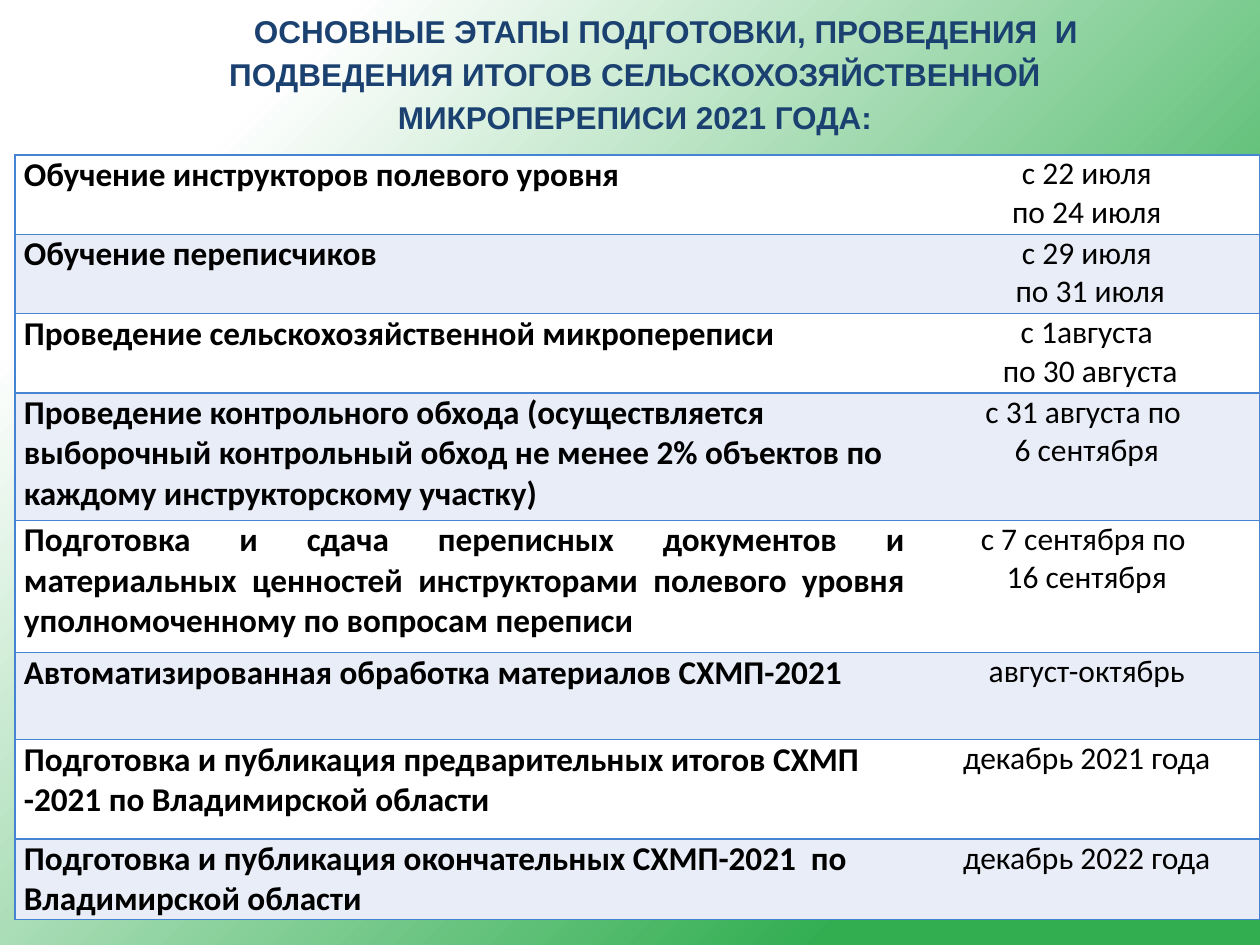
"""Build the slide with the stages of the 2021 agricultural micro-census."""
from lxml.etree import SubElement
from pptx import Presentation
from pptx.dml.color import RGBColor
from pptx.enum.text import MSO_ANCHOR, MSO_AUTO_SIZE, PP_ALIGN
from pptx.oxml.ns import qn
from pptx.util import Inches, Pt

TITLE = ("ОСНОВНЫЕ ЭТАПЫ ПОДГОТОВКИ, ПРОВЕДЕНИЯ  И ПОДВЕДЕНИЯ ИТОГОВ "
         "СЕЛЬСКОХОЗЯЙСТВЕННОЙ МИКРОПЕРЕПИСИ 2021 ГОДА:")
LEFT, CENTER, JUSTIFY = PP_ALIGN.LEFT, PP_ALIGN.CENTER, PP_ALIGN.JUSTIFY
STAGES = [
    (0.63, LEFT, "Обучение инструкторов полевого уровня",
     ["с 22 июля", "по 24 июля"]),
    (0.63, LEFT, "Обучение переписчиков", ["с 29 июля", " по 31 июля"]),
    (0.63, LEFT, "Проведение сельскохозяйственной микропереписи",
     ["с 1августа", " по 30 августа"]),
    (1.01, LEFT, "Проведение контрольного обхода (осуществляется выборочный "
     "контрольный обход не менее 2% объектов по каждому инструкторскому участку)",
     ["с 31 августа по ", "6 сентября"]),
    (1.05, JUSTIFY, "Подготовка и сдача переписных документов и материальных "
     "ценностей инструкторами полевого уровня уполномоченному по вопросам переписи",
     ["с 7 сентября по ", "16 сентября"]),
    (0.69, LEFT, "Автоматизированная обработка материалов СХМП-2021",
     ["август-октябрь"]),
    (0.79, LEFT, "Подготовка и публикация предварительных итогов СХМП -2021 "
     "по Владимирской области", ["декабрь 2021 года"]),
    (0.64, LEFT, "Подготовка и публикация окончательных СХМП-2021  "
     "по Владимирской области", ["декабрь 2022 года"]),
]
COLUMNS = [7.13, 2.75]
BANDS = ["FFFFFF", "E9EDF7"]
BORDER = "4584D3"
STAGE_FONT = {"name": "Calibri", "size": Pt(19), "bold": True}
DATE_FONT = {"name": "Calibri", "size": Pt(18), "bold": False}
TITLE_FONT = {"name": "Arial", "size": Pt(18), "bold": True}


def rgb(value):
    """Turn a hex string into a colour."""
    return RGBColor.from_string(value)


def assign(target, values):
    """Set each named attribute on the target."""
    for name, value in values.items():
        setattr(target, name, value)


def write(p, text, font, color, align):
    """Put one formatted run into a paragraph."""
    p.alignment = align
    r = p.add_run()
    r.text = text
    assign(r.font, font)
    r.font.color.rgb = rgb(color)


def set_borders(cell, open_side):
    """Draw 1 pt borders on every side but the open one."""
    tcPr = cell._tc.get_or_add_tcPr()
    for side in "LRTB":
        ln = SubElement(tcPr, qn(f"a:ln{side}"), w=str(Pt(1)))
        if side == open_side:
            SubElement(ln, qn("a:noFill"))
        else:
            fill = SubElement(ln, qn("a:solidFill"))
            SubElement(fill, qn("a:srgbClr"), val=BORDER)


def fill_cell(cell, lines, font, align, band, open_side):
    """Write the lines of a cell and set its look."""
    assign(cell, {"margin_left": Inches(0.07), "margin_right": Inches(0.07),
                  "margin_top": 0, "margin_bottom": 0,
                  "vertical_anchor": MSO_ANCHOR.TOP})
    set_borders(cell, open_side)
    cell.fill.solid()
    cell.fill.fore_color.rgb = rgb(band)
    tf = cell.text_frame
    for i, line in enumerate(lines):
        p = tf.add_paragraph() if i else tf.paragraphs[0]
        write(p, line, font, "000000", align)


def add_background(s):
    """Shade the slide from white to green along the diagonal."""
    fill = s.background.fill
    fill.gradient()
    fill.gradient_angle = 315
    for stop, (position, color) in zip(fill.gradient_stops,
                                       [(0.16, "FFFFFF"), (0.8, "32AE51")]):
        stop.position = position
        stop.color.rgb = rgb(color)


def add_title(s):
    """Place and format the title."""
    sp = s.shapes.title
    assign(sp, {"left": Inches(0.59), "top": 0,
                "width": Inches(8.9), "height": Inches(1.49)})
    tf = sp.text_frame
    assign(tf, {"word_wrap": True, "auto_size": MSO_AUTO_SIZE.NONE,
                "vertical_anchor": MSO_ANCHOR.TOP})
    p = tf.paragraphs[0]
    p.line_spacing = 1.14
    write(p, TITLE, TITLE_FONT, "1B4171", CENTER)
    p._p.get_or_add_pPr().set("indent", str(Inches(0.49)))


def add_stages(s):
    """Add the table of stages and dates."""
    height = sum(stage[0] for stage in STAGES)
    table = s.shapes.add_table(len(STAGES), len(COLUMNS), Inches(0.12), Inches(1.23),
                               Inches(sum(COLUMNS)), Inches(height)).table
    assign(table, {"first_row": False, "horz_banding": False})
    for column, width in zip(table.columns, COLUMNS):
        column.width = Inches(width)
    for i, (row_height, align, stage, dates) in enumerate(STAGES):
        table.rows[i].height = Inches(row_height)
        band = BANDS[i % 2]
        fill_cell(table.cell(i, 0), [stage], STAGE_FONT, align, band, "R")
        fill_cell(table.cell(i, 1), dates, DATE_FONT, CENTER, band, "L")


def main():
    """Build and save the presentation."""
    prs = Presentation()
    assign(prs, {"slide_width": Inches(10), "slide_height": Inches(7.5)})
    s = prs.slides.add_slide(prs.slide_layouts[5])
    add_background(s)
    add_title(s)
    add_stages(s)
    prs.save("out.pptx")


if __name__ == "__main__":
    main()
